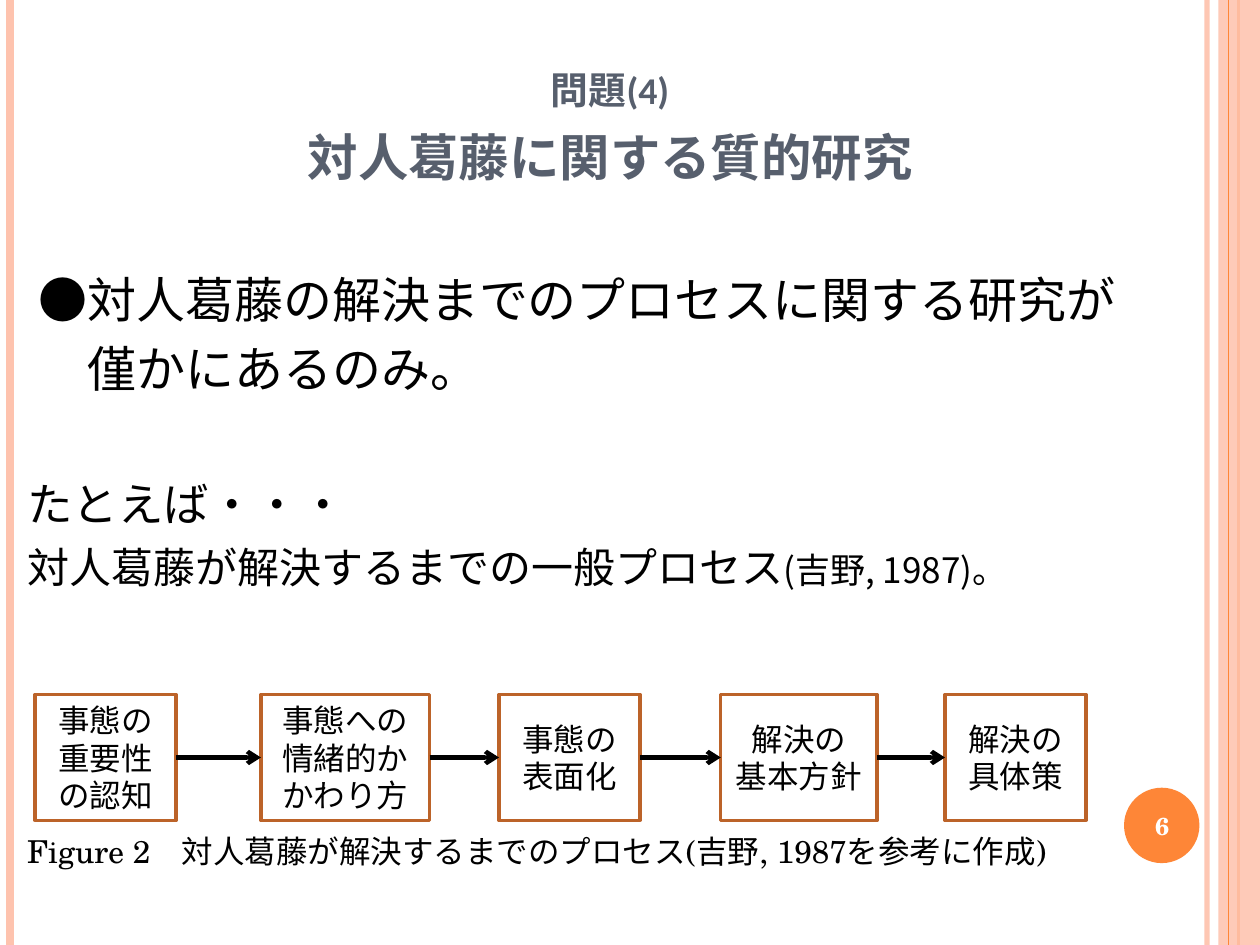
"""Build a slide on qualitative research into interpersonal conflict."""
import itertools
from typing import NamedTuple

import pptx
import pptx.dml.color
import pptx.enum.shapes
import pptx.enum.text
import pptx.oxml
import pptx.oxml.ns
import pptx.util

Cm, Pt = pptx.util.Cm, pptx.util.Pt
ALIGN, ANCHOR = pptx.enum.text.PP_ALIGN, pptx.enum.text.MSO_ANCHOR
SHAPE = pptx.enum.shapes.MSO_SHAPE
STRAIGHT = pptx.enum.shapes.MSO_CONNECTOR.STRAIGHT
CJK, SERIF = "Noto Sans CJK JP", "TeX Gyre Schola"
PINK, ORANGE, BROWN = "FEC3AE", "FE8637", "BC6329"
BLACK, WHITE, SLATE = "000000", "FFFFFF", "575F6D"
STEP_TOP, STEP_HEIGHT = 14.0, 2.54


class Rail(NamedTuple):
    x: float
    color: str
    width: float
    alpha: int = 100


class Step(NamedTuple):
    x: float
    width: float
    lines: tuple[str, ...]


RAILS = [Rail(24.33, PINK, 3, 93), Rail(0.2, PINK, 4.5),
         Rail(24.97, ORANGE, 1.5), Rail(24.77, ORANGE, 0.75)]
STEPS = [
    Step(0.71, 2.84, ("事態の重要性の認知",)),
    Step(5.26, 3.4, ("事態への情緒的かかわり方",)),
    Step(10.06, 2.84, ("事態の表面化",)),
    Step(14.53, 3.15, ("解決の", "基本方針")),
    Step(19.05, 2.84, ("解決の具体策",)),
]


def add_element(parent, tag: str, **attrs: str):
    el = pptx.oxml.parse_xml(f"<{tag} {pptx.oxml.ns.nsdecls('a')}/>")
    for name, value in attrs.items():
        el.set(name, value)
    parent.append(el)
    return el


def paint(fill, color: str, alpha: int = 100) -> None:
    fill.solid()
    fill.fore_color.rgb = pptx.dml.color.RGBColor.from_string(color)
    if alpha < 100:
        for clr in fill._xPr.iter(pptx.oxml.ns.qn("a:srgbClr")):
            add_element(clr, "a:alpha", val=str(alpha * 1000))


def add_text(p, text: str, *, size: float, font: str = CJK, color: str = BLACK,
             bold: bool = False, small_caps: bool = False) -> None:
    r = p.add_run()
    r.text = text
    r.font.size, r.font.bold, r.font.name = Pt(size), bold, font
    paint(r.font.fill, color)
    rPr = r.font._element
    add_element(rPr, "a:ea", typeface=CJK)
    if small_caps:
        rPr.set("cap", "small")


def add_box(s, x: float, y: float, w: float, h: float):
    tf = s.shapes.add_textbox(Cm(x), Cm(y), Cm(w), Cm(h)).text_frame
    tf.word_wrap = True
    return tf


def add_shape(s, kind, x: float, y: float, w: float, h: float):
    sp = s.shapes.add_shape(kind, Cm(x), Cm(y), Cm(w), Cm(h))
    sp.shadow.inherit = False
    sp.fill.background()
    sp.line.fill.background()
    return sp


def add_line(s, x1: float, y1: float, x2: float, y2: float, color: str,
             width: float, alpha: int = 100, arrow: bool = False) -> None:
    cx = s.shapes.add_connector(STRAIGHT, Cm(x1), Cm(y1), Cm(x2), Cm(y2))
    cx.line.width = Pt(width)
    paint(cx.line.fill, color, alpha)
    if arrow:
        add_element(cx.line._get_or_add_ln(), "a:tailEnd", type="arrow")
    add_element(cx._element.spPr, "a:effectLst")


def add_frame(s) -> None:
    for rail in RAILS:
        add_line(s, rail.x, 0, rail.x, 19.05, rail.color, rail.width, rail.alpha)
    band = add_shape(s, SHAPE.RECTANGLE, 24.56, 0, 0.84, 19.05)
    paint(band.fill, PINK, 87)
    add_line(s, RAILS[-1].x, 0, RAILS[-1].x, 19.05, ORANGE, 0.75)
    disc = add_shape(s, SHAPE.OVAL, 22.66, 15.88, 1.52, 1.52)
    paint(disc.fill, ORANGE)
    tf = add_box(s, 22.58, 15.93, 1.7, 1.45)
    tf.vertical_anchor = ANCHOR.MIDDLE
    p = tf.paragraphs[0]
    p.alignment = ALIGN.CENTER
    add_text(p, "6", size=14, font=SERIF, color=WHITE, bold=True)


def add_title(s) -> None:
    sp = s.shapes.title
    sp.left, sp.top, sp.width, sp.height = Cm(0.3), Cm(0.76), Cm(24), Cm(3.18)
    tf = sp.text_frame
    tf.vertical_anchor = ANCHOR.BOTTOM
    p = tf.paragraphs[0]
    p.alignment = ALIGN.CENTER
    style = dict(font="Calibri", color=SLATE, bold=True, small_caps=True)
    add_text(p, "問題(4)", size=27, **style)
    p.add_line_break()
    add_text(p, "対人葛藤に関する質的研究", size=36, **style)


def add_body(s) -> None:
    tf = add_box(s, 0.3, 4.01, 24.51, 13.34)
    tf.margin_top = Cm(1.42)
    rows = [
        (0.23, 0, [("●対人葛藤の解決までのプロセスに関する研究が", 28)]),
        (1.22, 6, [("僅かにあるのみ。", 28)]),
        (0, 45, [("たとえば・・・", 26)]),
        (0, 6, [("対人葛藤が解決するまでの一般プロセス", 24), ("(吉野, 1987)。", 20)]),
    ]
    for i, (indent, before, runs) in enumerate(rows):
        p = tf.add_paragraph() if i else tf.paragraphs[0]
        p.space_before = Pt(before)
        p._p.get_or_add_pPr().set("marL", str(Cm(indent)))
        for text, size in runs:
            add_text(p, text, size=size)


def add_step(s, step: Step) -> None:
    sp = add_shape(s, SHAPE.RECTANGLE, step.x, STEP_TOP, step.width, STEP_HEIGHT)
    paint(sp.line.fill, BROWN)
    sp.line.width = Pt(2)
    tf = sp.text_frame
    tf.word_wrap = True
    tf.vertical_anchor = ANCHOR.MIDDLE
    for i, text in enumerate(step.lines):
        p = tf.add_paragraph() if i else tf.paragraphs[0]
        p.alignment = ALIGN.CENTER
        add_text(p, text, size=18)


def main() -> None:
    prs = pptx.Presentation()
    prs.slide_width, prs.slide_height = Cm(25.4), Cm(19.05)
    s = prs.slides.add_slide(prs.slide_layouts[5])
    paint(s.background.fill, WHITE)
    add_frame(s)
    add_title(s)
    add_body(s)
    for step in STEPS:
        add_step(s, step)
    y = STEP_TOP + STEP_HEIGHT / 2
    for a, b in itertools.pairwise(STEPS):
        add_line(s, a.x + a.width, y, b.x, y, BLACK, 2.5, arrow=True)
    tf = add_box(s, 0.3, 16.64, 24.41, 1.02)
    add_text(tf.paragraphs[0], "Figure 2\u3000対人葛藤が解決するまでのプロセス(吉野, 1987を参考に作成)",
             size=18, font=SERIF)
    prs.save("out.pptx")


if __name__ == "__main__":
    main()
